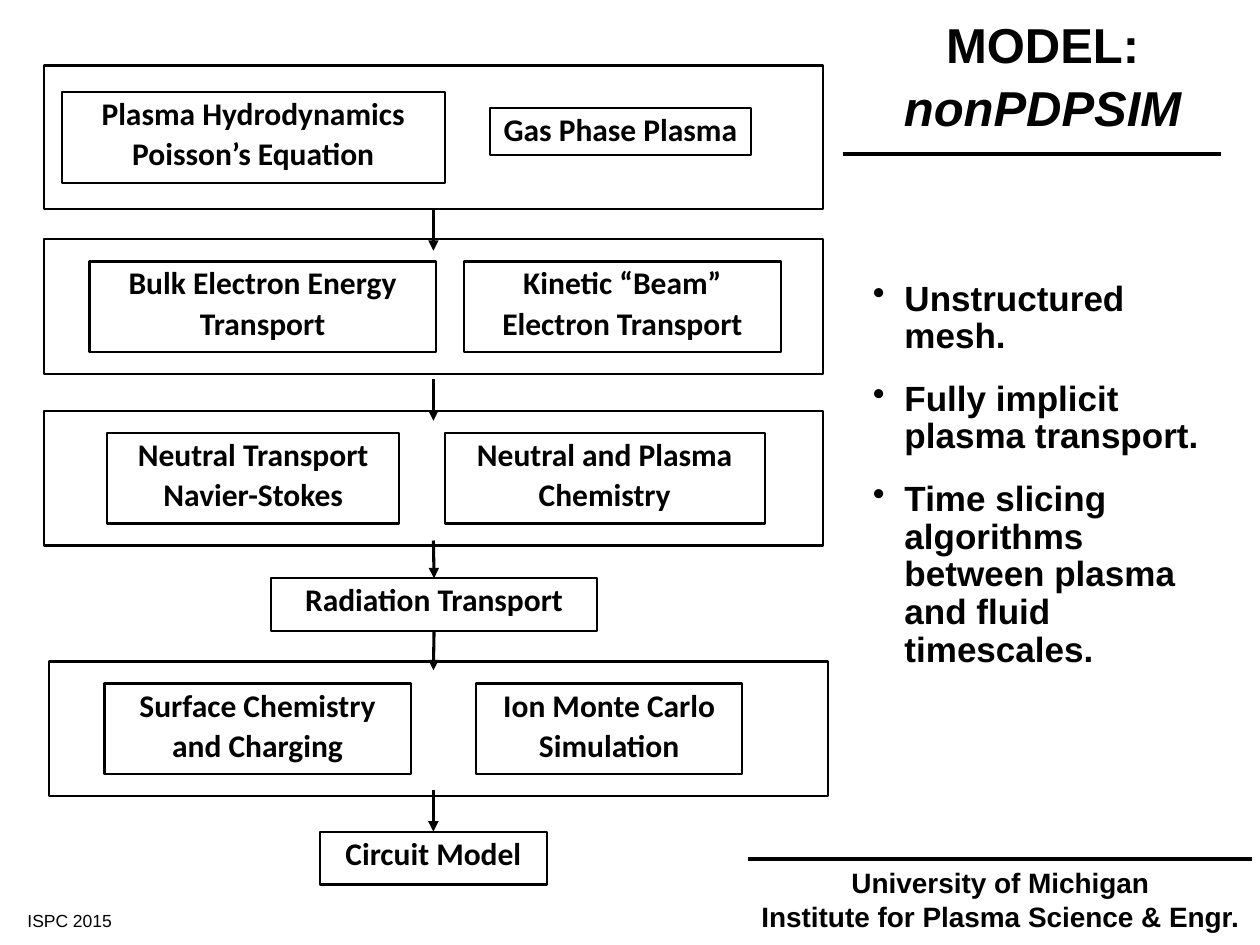
import pptx
import pptx.dml.color
import pptx.enum.shapes
import pptx.enum.text
import pptx.oxml
import pptx.oxml.ns
import pptx.util

Pt = pptx.util.Pt
CENTER = pptx.enum.text.PP_ALIGN.CENTER
LEFT = pptx.enum.text.PP_ALIGN.LEFT
BLACK = pptx.dml.color.RGBColor(0x00, 0x00, 0x00)

deck = pptx.Presentation()
deck.slide_width = pptx.util.Inches(10)
deck.slide_height = pptx.util.Inches(7.5)
COLUMN = deck.slide_width / 100
ROW = deck.slide_height / 75
slide = deck.slides.add_slide(deck.slide_layouts[5])


def write(frame, lines, font_format, paragraph_format, wrap=True):
    frame_format = {
        "text": "\n".join(lines),
        "word_wrap": wrap,
        "auto_size": pptx.enum.text.MSO_AUTO_SIZE.NONE,
        "vertical_anchor": pptx.enum.text.MSO_ANCHOR.TOP,
    }
    for name, value in frame_format.items():
        setattr(frame, name, value)
    for paragraph in frame.paragraphs:
        for name, value in paragraph_format.items():
            setattr(paragraph, name, value)
        for run in paragraph.runs:
            run.font.color.rgb = BLACK
            for name, value in font_format.items():
                setattr(run.font, name, value)


def draw_line(start, end, weight):
    line = slide.shapes.add_connector(
        pptx.enum.shapes.MSO_CONNECTOR.STRAIGHT,
        int(start[0] * COLUMN), int(start[1] * ROW),
        int(end[0] * COLUMN), int(end[1] * ROW))
    line.line.color.rgb = BLACK
    line.line.width = Pt(weight)
    pptx.oxml.ns.qn("a:effectLst")
    line._element.spPr.append(pptx.oxml.parse_xml(
        f'<a:effectLst {pptx.oxml.ns.nsdecls("a")}/>'))
    return line


heading = slide.shapes.title
heading.left, heading.top = int(67.6 * COLUMN), int(1.2 * ROW)
heading.width, heading.height = int(30.3 * COLUMN), int(10.3 * ROW)
write(heading.text_frame, ["MODEL:", "nonPDPSIM"],
      {"name": "Arial", "size": Pt(28), "bold": True},
      {"alignment": CENTER, "line_spacing": 0.9, "space_before": Pt(5.6)})
heading.text_frame.paragraphs[1].runs[0].font.italic = True
draw_line((66.9, 12.2), (96.9, 12.2), 2.25)

FRAME_WIDTH, FRAME_HEIGHT = 61.8, 10.7
STEP_TOP, STEP_HEIGHT = 1.75, 7.2
modules = [
    (3.5, 5.2, FRAME_WIDTH, 11.4, []),
    (4.9, 7.3, 30.4, STEP_HEIGHT, ["Plasma Hydrodynamics", "Poisson’s Equation"]),
    (38.9, 8.6, 20.7, 3.7, ["Gas Phase Plasma"]),
    (21.5, 45.9, 25.9, 4.2, ["Radiation Transport"]),
    (25.4, 66, 18, 4.2, ["Circuit Model"]),
]
stages = [
    (3.5, 19, [(7.1, 27.5, ["Bulk Electron Energy", "Transport"]),
               (36.8, 25.2, ["Kinetic “Beam”", "Electron Transport"])]),
    (3.5, 32.6, [(8.5, 23.2, ["Neutral Transport", "Navier-Stokes"]),
                 (35.3, 25.4, ["Neutral and Plasma", "Chemistry"])]),
    (3.9, 52.5, [(8.3, 24.3, ["Surface Chemistry", "and Charging"]),
                 (37.8, 21.1, ["Ion Monte Carlo", "Simulation"])]),
]
for left, top, steps in stages:
    modules.append((left, top, FRAME_WIDTH, FRAME_HEIGHT, []))
    for step_left, step_width, lines in steps:
        modules.append((step_left, top + STEP_TOP, step_width, STEP_HEIGHT, lines))

boxes = []
for left, top, width, height, lines in modules:
    box = slide.shapes.add_shape(
        pptx.enum.shapes.MSO_SHAPE.RECTANGLE,
        int(left * COLUMN), int(top * ROW), int(width * COLUMN), int(height * ROW))
    box.shadow.inherit = False
    box.fill.background()
    box.line.color.rgb = BLACK
    box.line.width = Pt(1.25)
    if lines:
        write(box.text_frame, lines,
              {"name": "Calibri", "size": Pt(18), "bold": True},
              {"alignment": CENTER, "line_spacing": 0.9, "space_before": Pt(3.6)},
              wrap=False)
    boxes.append(box)
plasma, radiation, circuit = boxes[0], boxes[3], boxes[4]

FLOW = 34.4
for start, end, source, target in [
    (16.6, 19.9, plasma, None),
    (30.1, 33.4, None, None),
    (42.9, 45.9, None, radiation),
    (50.1, 53.2, radiation, None),
    (62.7, 66, None, circuit),
]:
    arrow = draw_line((FLOW, start), (FLOW, end), 1.75)
    arrow.line._get_or_add_ln().append(pptx.oxml.parse_xml(
        f'<a:tailEnd {pptx.oxml.ns.nsdecls("a")} type="triangle"/>'))
    if source:
        arrow.begin_connect(source, 2)
    if target:
        arrow.end_connect(target, 0)

draw_line((59.4, 68.15), (99.4, 68.15), 2.25)

captions = [
    (68.3, 21.8, 28.9, 33,
     ["Unstructured mesh.", "Fully implicit plasma transport.",
      "Time slicing algorithms between plasma and fluid timescales."],
     {"name": "Arial", "size": Pt(20), "bold": True},
     {"alignment": LEFT, "line_spacing": 0.9,
      "space_before": Pt(4), "space_after": Pt(10)}),
    (58.8, 68.2, 41.2, 6.4,
     ["University of Michigan", "Institute for Plasma Science & Engr."],
     {"name": "Arial", "size": Pt(16), "bold": True}, {"alignment": CENTER}),
    (1.2, 71.9, 9.4, 2.5, ["ISPC 2015"],
     {"name": "Arial", "size": Pt(10)}, {"line_spacing": 0.9}),
]
texts = []
for left, top, width, height, lines, font_format, paragraph_format in captions:
    caption = slide.shapes.add_textbox(
        int(left * COLUMN), int(top * ROW), int(width * COLUMN), int(height * ROW))
    write(caption.text_frame, lines, font_format, paragraph_format)
    texts.append(caption.text_frame)

features = texts[0]
for feature in features.paragraphs:
    properties = feature._p.get_or_add_pPr()
    properties.set("marL", str(int(2.5 * COLUMN)))
    properties.set("indent", str(int(-2.5 * COLUMN)))
    properties.append(pptx.oxml.parse_xml(
        f'<a:buChar {pptx.oxml.ns.nsdecls("a")} char="•"/>'))

deck.save("out.pptx")
